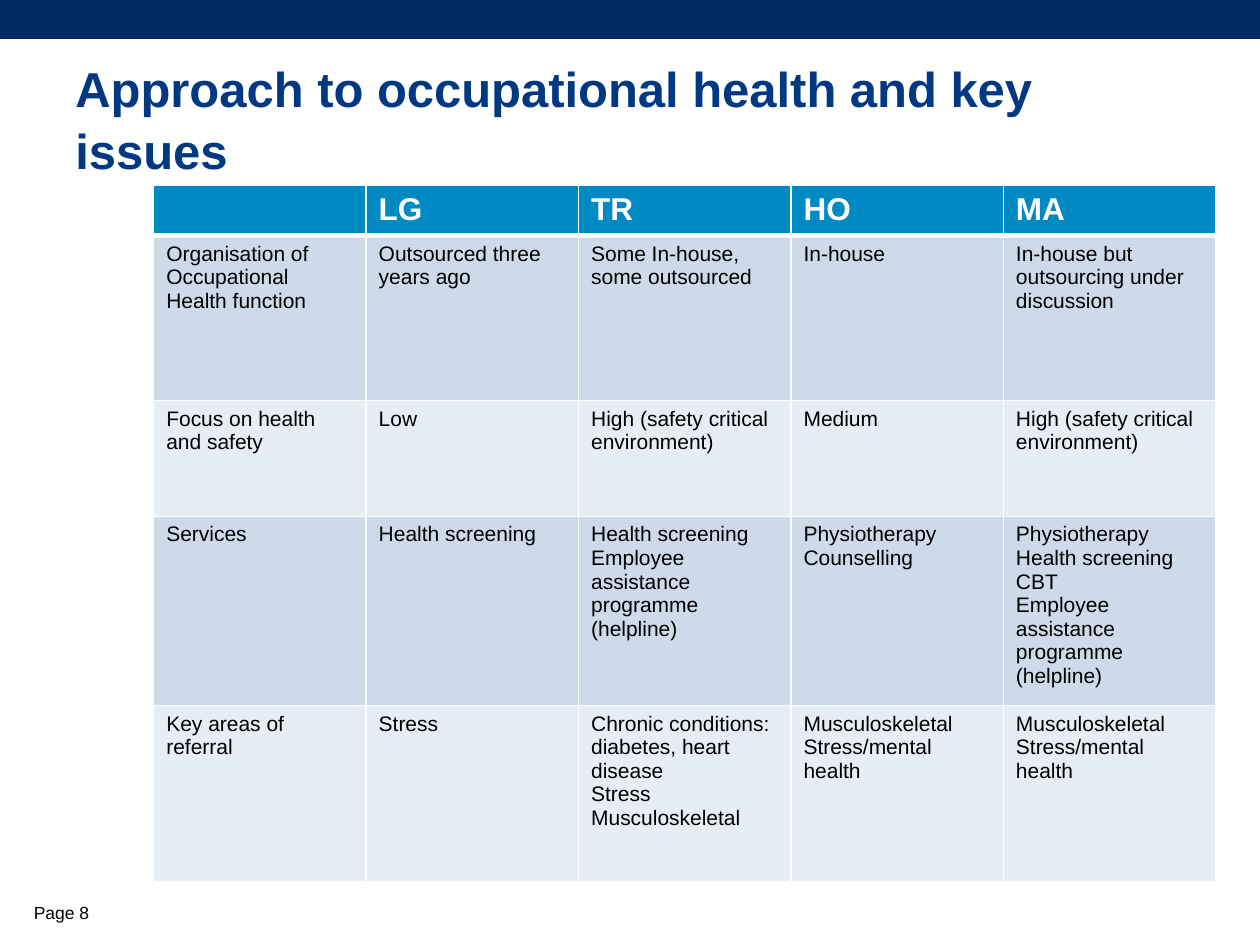
from dataclasses import dataclass

import pptx
import pptx.dml.color
import pptx.enum.shapes
import pptx.enum.text
import pptx.oxml
import pptx.oxml.ns
import pptx.util
from pptx.util import Inches


@dataclass(frozen=True)
class Theme:
    font: str = "Arial"
    banner: str = "002A62"
    title: str = "003882"
    header: str = "008AC4"
    bands: tuple = ("CCDAEA", "E7EDF5")
    white: str = "FFFFFF"
    black: str = "000000"
    title_size: int = 28
    header_size: int = 18
    body_size: int = 12
    page_size: int = 10


theme = Theme()


def write_lines(frame, lines, size, color, bold=False):
    """Fill a text frame with one formatted paragraph per line."""
    formats = {"name": theme.font, "size": pptx.util.Pt(size), "bold": bold}
    for index, line in enumerate(lines):
        para = frame.add_paragraph() if index else frame.paragraphs[0]
        span = para.add_run()
        span.text = line
        for name, value in formats.items():
            setattr(span.font, name, value)
        span.font.color.rgb = pptx.dml.color.RGBColor.from_string(color)


def add_border(cell, side, points):
    namespace = pptx.oxml.ns.nsdecls("a")
    cell._tc.get_or_add_tcPr().append(pptx.oxml.parse_xml(
        f'<a:ln{side} {namespace} w="{pptx.util.Pt(points)}"><a:solidFill>'
        f'<a:srgbClr val="{theme.white}"/></a:solidFill></a:ln{side}>'))


deck = pptx.Presentation()
deck.slide_width, deck.slide_height = Inches(10), Inches(7.5)
page = deck.slides.add_slide(deck.slide_layouts[6])

banner = page.shapes.add_shape(
    pptx.enum.shapes.MSO_SHAPE.RECTANGLE, 0, 0, deck.slide_width, Inches(0.31))
banner.shadow.inherit = False
banner.fill.solid()
banner.fill.fore_color.rgb = pptx.dml.color.RGBColor.from_string(theme.banner)
banner.line.fill.background()

text_boxes = [
    ((0.5, 0.62, 9.07, 0.63), "Approach to occupational health and key issues",
     theme.title_size, theme.title, True, 1.05),
    ((0.17, 7.1, 0.74, 0.29), "Page 8", theme.page_size, theme.black, False, 1.0),
]
for place, text, size, color, bold, spacing in text_boxes:
    box = page.shapes.add_textbox(*map(Inches, place))
    box.text_frame.word_wrap = True
    box.text_frame.vertical_anchor = pptx.enum.text.MSO_ANCHOR.MIDDLE
    write_lines(box.text_frame, [text], size, color, bold)
    box.text_frame.paragraphs[0].line_spacing = spacing

# Each line break inside a cell starts a new paragraph.
rows = [
    ["", "LG", "TR", "HO", "MA"],
    ["Organisation of Occupational Health function", "Outsourced three years ago",
     "Some In-house, some outsourced", "In-house",
     "In-house but outsourcing under discussion"],
    ["Focus on health and safety", "Low", "High (safety critical environment)",
     "Medium", "High (safety critical environment)"],
    ["Services", "Health screening",
     "Health screening\nEmployee assistance programme (helpline)",
     "Physiotherapy\nCounselling",
     "Physiotherapy\nHealth screening\nCBT\nEmployee assistance programme\n(helpline)"],
    ["Key areas of referral", "Stress",
     "Chronic conditions: diabetes, heart disease\nStress\nMusculoskeletal",
     "Musculoskeletal\nStress/mental health", "Musculoskeletal\nStress/mental health"],
]
row_heights = [0.37, 1.31, 0.92, 1.4, 1.4]

table = page.shapes.add_table(
    len(rows), len(rows[0]), Inches(1.22), Inches(1.47),
    Inches(8.43), Inches(sum(row_heights))).table
for row, height in zip(table.rows, row_heights):
    row.height = Inches(height)

for row_index, texts in enumerate(rows):
    is_header = row_index == 0
    fill = theme.header if is_header else theme.bands[(row_index - 1) % 2]
    size = theme.header_size if is_header else theme.body_size
    color = theme.white if is_header else theme.black
    borders = {"L": 1, "R": 1, "T": 3 if row_index == 1 else 1, "B": 3 if is_header else 1}
    for column_index, text in enumerate(texts):
        cell = table.cell(row_index, column_index)
        for side, points in borders.items():
            add_border(cell, side, points)
        cell.fill.solid()
        cell.fill.fore_color.rgb = pptx.dml.color.RGBColor.from_string(fill)
        if text:
            write_lines(cell.text_frame, text.split("\n"), size, color, is_header)

deck.save("out.pptx")
